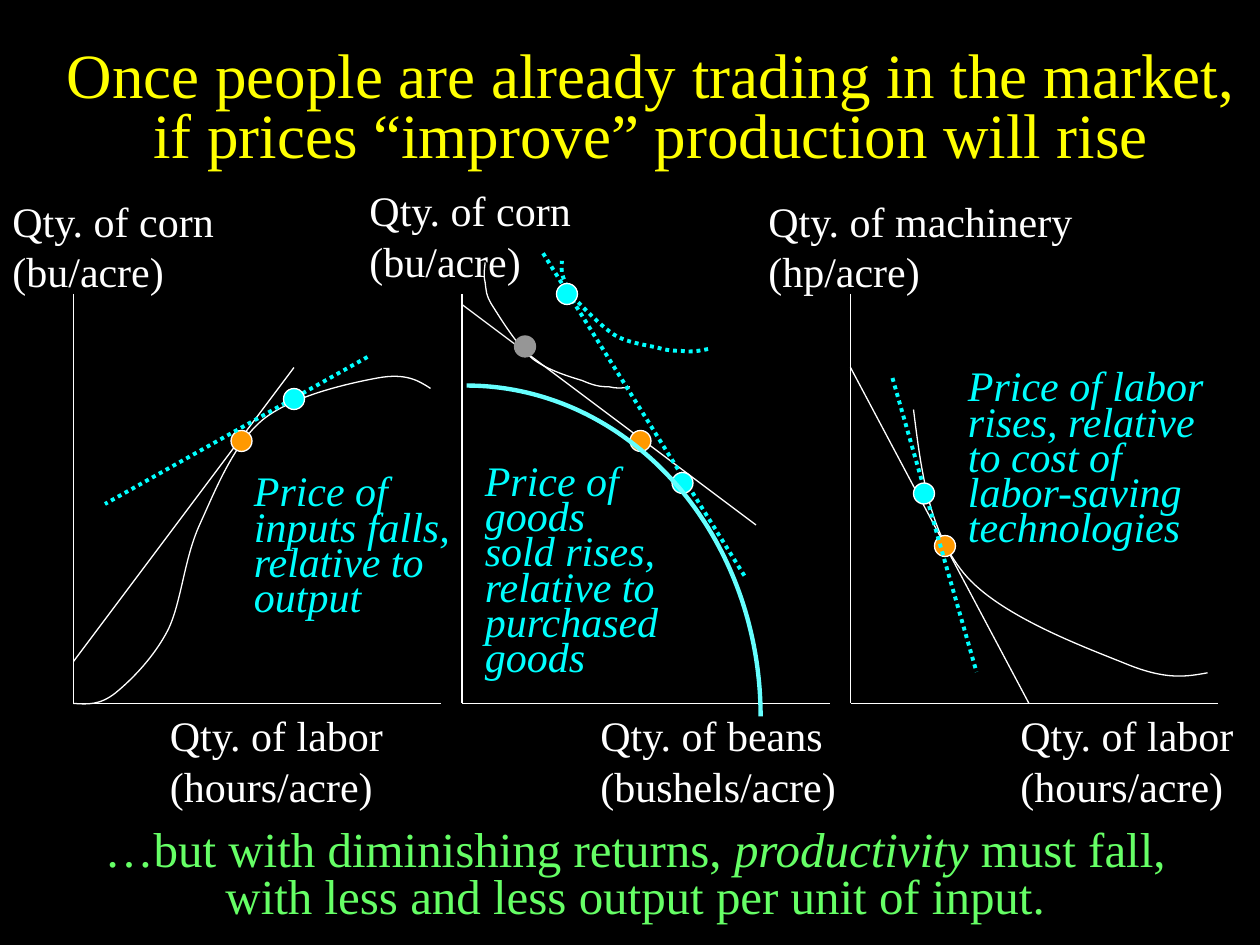
import pptx
import pptx.util
import pptx.dml.color
import pptx.enum.dml
import pptx.enum.shapes
import pptx.enum.text
import pptx.oxml.ns
from lxml import etree
from pptx.util import Inches

FONT = "Times New Roman"
WHITE, CYAN, ORANGE, GRAY = "FFFFFF", "00FFFF", "FF9900", "969696"
AXIS_TOP, AXIS_BOTTOM, AXIS_LENGTH = 2.33, 5.58, 2.92
AXIS_LEFTS = [0.58, 3.67, 6.75]
DOT = 0.17

AXIS_LABELS = [
    (0, 1.5, 1.82, "Qty. of corn", "(bu/acre)"),
    (1.25, 5.58, 2, "Qty. of labor", "(hours/acre)"),
    (2.83, 1.42, 1.82, "Qty. of corn", "(bu/acre)"),
    (4.67, 5.58, 2.07, "Qty. of beans", "(bushels/acre)"),
    (6, 1.5, 2.63, "Qty. of machinery", "(hp/acre)"),
    (8, 5.58, 2, "Qty. of labor", "(hours/acre)"),
]
OLD_PRICE_LINES = [(2.33, 2.92, 0.58, 5.25), (3.67, 2.42, 6, 4.17),
                   (6.75, 2.92, 8.17, 5.58)]
NEW_PRICE_LINES = [(2.92, 2.83, 0.83, 4), (4.31, 2.01, 5.92, 4.58),
                   (7.08, 3, 7.75, 5.33)]
# Each curve: a start point, then two control points and an end point per piece
RESPONSE_CURVE = [
    (0.58, 5.58), (0.69, 5.59), (0.79, 5.6), (0.92, 5.5),
    (1.04, 5.4), (1.22, 5.22), (1.33, 5), (1.44, 4.78), (1.46, 4.44), (1.58, 4.17),
    (1.71, 3.89), (1.85, 3.53), (2.08, 3.33), (2.32, 3.14), (2.78, 3.04), (3, 3),
    (3.22, 2.96), (3.32, 3.02), (3.42, 3.08)]
ISOQUANT = [
    (7.25, 3.25), (7.31, 3.73), (7.37, 4.21), (7.65, 4.55),
    (7.93, 4.89), (8.62, 5.14), (8.94, 5.27), (9.26, 5.4), (9.42, 5.37), (9.58, 5.34)]
OLD_INDIFFERENCE = [
    (5, 3.07), (4.94, 3.08), (4.89, 3.08), (4.83, 3.07),
    (4.76, 3.07), (4.71, 3.06), (4.62, 3.02), (4.52, 2.99), (4.35, 2.94), (4.23, 2.85),
    (4.11, 2.75), (3.98, 2.54), (3.92, 2.44), (3.85, 2.34), (3.86, 2.3), (3.85, 2.24),
    (3.83, 2.18), (3.85, 2.11), (3.85, 2.08)]
NEW_INDIFFERENCE = [
    (5.62, 2.77), (5.57, 2.78), (5.52, 2.79), (5.46, 2.79),
    (5.4, 2.78), (5.35, 2.79), (5.26, 2.77), (5.16, 2.74), (5, 2.73), (4.88, 2.66),
    (4.77, 2.59), (4.62, 2.43), (4.55, 2.36), (4.49, 2.28), (4.49, 2.24), (4.47, 2.2),
    (4.45, 2.15), (4.46, 2.09), (4.46, 2.07)]
OLD_CHOICES = [(1.83, 3.42), (7.42, 4.25), (5, 3.42)]
NEW_CHOICES = [(2.25, 3.08), (5.33, 3.75), (4.42, 2.25), (7.25, 3.83)]
PRICE_NOTES = [
    (1.92, 3.75, 1.83, 1.22, "Price of inputs falls, relative to output"),
    (3.75, 3.67, 1.58, 1.78, "Price of goods sold rises, relative to purchased goods"),
    (7.58, 2.92, 2.17, 1.5,
     "Price of labor rises, relative to cost of labor-saving technologies"),
]


def rgb(color):
    return pptx.dml.color.RGBColor.from_string(color)


def grid(*values):
    """Convert inches to lengths, snapping to twelfths those that lie next to one."""
    snapped = [round(v * 12) / 12 for v in values]
    return [Inches(s if abs(s - v) < 0.005 else v) for s, v in zip(snapped, values)]


def style_line(sp, color, width, dotted=False):
    sp.line.color.rgb = rgb(color)
    sp.line.width = pptx.util.Pt(width)
    if dotted:
        sp.line.dash_style = pptx.enum.dml.MSO_LINE.ROUND_DOT


def add_line(slide, x1, y1, x2, y2, color=WHITE, width=0.75, dotted=False):
    kind = pptx.enum.shapes.MSO_CONNECTOR.STRAIGHT
    line = slide.shapes.add_connector(kind, *grid(x1, y1, x2, y2))
    style_line(line, color, width, dotted)
    etree.SubElement(line._element.spPr, pptx.oxml.ns.qn("a:effectLst"))


def add_curve(slide, points, color=WHITE, width=0.75, dotted=False):
    """Build an outline through all points, then join each three as a Bezier piece."""
    qn = pptx.oxml.ns.qn
    builder = slide.shapes.build_freeform(*grid(*points[0]))
    builder.add_line_segments([grid(*point) for point in points[1:]], close=False)
    sp = builder.convert_to_shape()
    outline = next(sp._element.iter(qn("a:path")))
    segments = outline.findall(qn("a:lnTo"))
    for i in range(0, len(segments), 3):
        bezier = etree.SubElement(outline, qn("a:cubicBezTo"))
        for segment in segments[i:i + 3]:
            bezier.append(segment[0])
            outline.remove(segment)
    sp.shadow.inherit = False
    sp.fill.background()
    style_line(sp, color, width, dotted)


def add_dot(slide, x, y, color, outline=WHITE):
    sp = slide.shapes.add_shape(pptx.enum.shapes.MSO_SHAPE.OVAL,
                                *grid(x, y, DOT, DOT))
    sp.shadow.inherit = False
    sp.fill.solid()
    sp.fill.fore_color.rgb = rgb(color)
    style_line(sp, outline, 0.75)


def add_frontier(slide):
    sp = slide.shapes.add_shape(pptx.enum.shapes.MSO_SHAPE.ARC,
                                *grid(1.37, 3.06, 4.67, 5.25))
    sp.shadow.inherit = False
    sp.fill.background()
    style_line(sp, "66FFFF", 2.5)


def format_paragraph(p, size, color, spacing=None, centered=False, italic=None):
    p.font.name = FONT
    p.font.size = pptx.util.Pt(size)
    p.font.color.rgb = rgb(color)
    p.font.italic = italic
    p.line_spacing = spacing
    if centered:
        p.alignment = pptx.enum.text.PP_ALIGN.CENTER


def add_text(slide, x, y, w, h, lines, size, color, wrap=True, grow=True, **style):
    sp = slide.shapes.add_textbox(*grid(x, y, w, h))
    tf = sp.text_frame
    tf.word_wrap = wrap
    if grow:
        tf.auto_size = pptx.enum.text.MSO_AUTO_SIZE.SHAPE_TO_FIT_TEXT
    tf.text = "\n".join(lines)
    for p in tf.paragraphs:
        format_paragraph(p, size, color, **style)
    return tf


def add_title(slide):
    sp = slide.shapes.title
    sp.left, sp.top, sp.width, sp.height = grid(0.33, 0.5, 9.67, 0.75)
    tf = sp.text_frame
    tf.auto_size = pptx.enum.text.MSO_AUTO_SIZE.NONE
    tf.vertical_anchor = pptx.enum.text.MSO_ANCHOR.MIDDLE
    p = tf.paragraphs[0]
    p.text = ("Once people are already trading in the market,\v"
              "if prices “improve” production will rise")
    format_paragraph(p, 36, "FFFF00", spacing=0.8, centered=True)


def add_conclusion(slide):
    tf = add_text(slide, -0.25, 6.58, 10.58, 0.75,
                  ["…but with diminishing returns, ",
                   "with less and less output per unit of input."],
                  28, "66FF66", grow=False, spacing=0.8, centered=True)
    tf.vertical_anchor = pptx.enum.text.MSO_ANCHOR.MIDDLE
    p = tf.paragraphs[0]
    for text, italic in [("productivity ", True), ("must fall,", False)]:
        r = p.add_run()
        r.text = text
        r.font.italic = italic


def main():
    prs = pptx.Presentation()
    prs.slide_width, prs.slide_height = Inches(10), Inches(7.5)
    slide = prs.slides.add_slide(prs.slide_layouts[5])
    slide.background.fill.solid()
    slide.background.fill.fore_color.rgb = rgb("000000")
    add_title(slide)
    for ends in OLD_PRICE_LINES:
        add_line(slide, *ends)
    for x in AXIS_LEFTS:
        add_line(slide, x, AXIS_TOP, x, AXIS_BOTTOM)
        add_line(slide, x, AXIS_BOTTOM, x + AXIS_LENGTH, AXIS_BOTTOM)
    add_curve(slide, RESPONSE_CURVE)
    for x, y, w, quantity, unit in AXIS_LABELS:
        add_text(slide, x, y, w, 0.9, [quantity, unit], 24, WHITE, wrap=False)
    add_curve(slide, ISOQUANT)
    for x, y in OLD_CHOICES:
        add_dot(slide, x, y, ORANGE)
    add_curve(slide, OLD_INDIFFERENCE)
    add_dot(slide, 4.08, 2.67, GRAY, GRAY)
    for ends in NEW_PRICE_LINES:
        add_line(slide, *ends, CYAN, 2.25, dotted=True)
    add_curve(slide, NEW_INDIFFERENCE, CYAN, 2.25, dotted=True)
    for x, y in NEW_CHOICES:
        add_dot(slide, x, y, CYAN)
    for x, y, w, h, note in PRICE_NOTES:
        add_text(slide, x, y, w, h, [note], 24, CYAN, spacing=0.7, italic=True)
    add_conclusion(slide)
    add_frontier(slide)
    prs.save("out.pptx")


if __name__ == "__main__":
    main()
